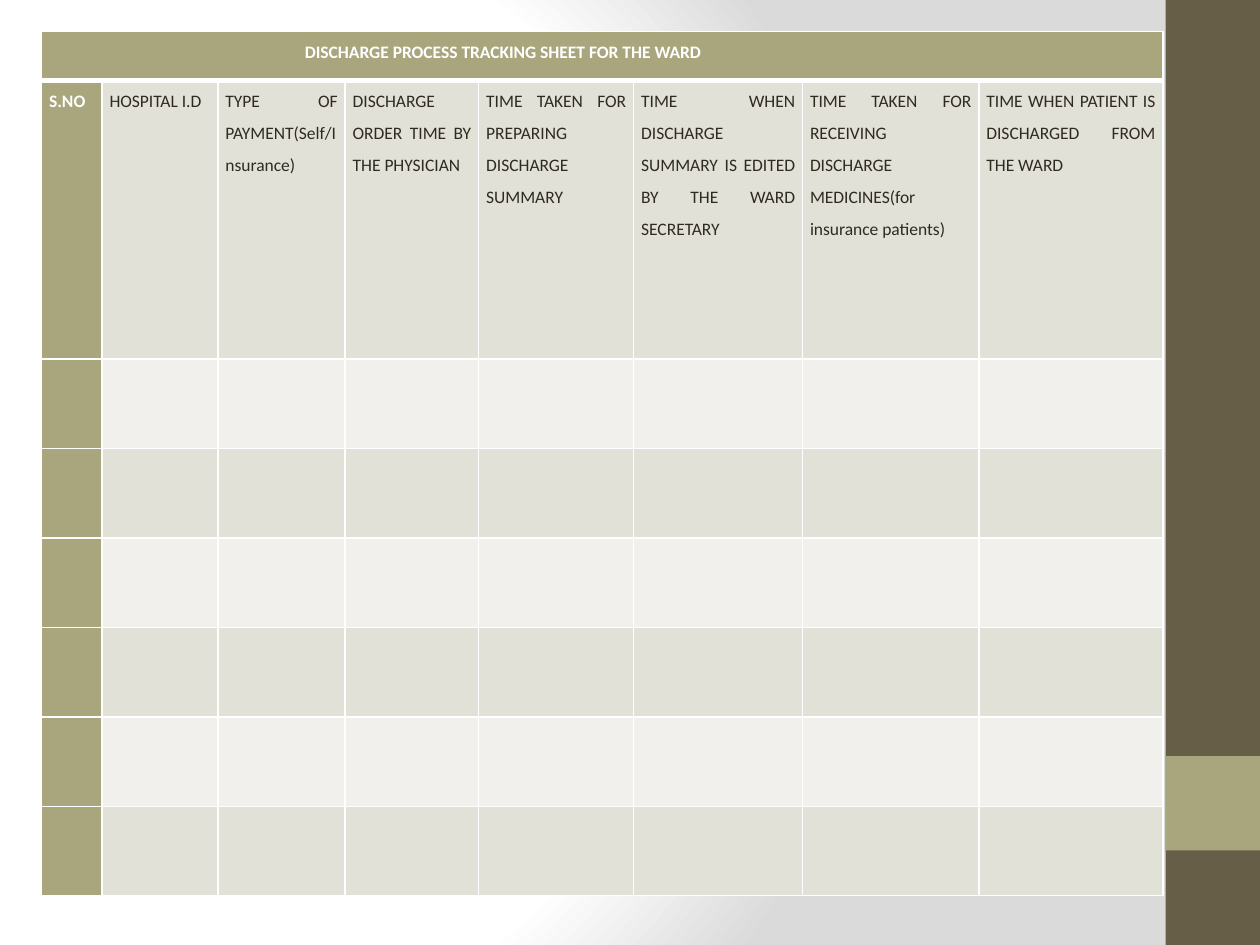
"""Build the discharge process tracking sheet slide."""
import pptx
import pptx.dml.color
import pptx.enum.shapes
import pptx.enum.text
import pptx.oxml
import pptx.oxml.ns
import pptx.util
from pptx.util import Inches

COLORS = {"bar": "675E47", "accent": "A9A57C", "band": "E2E1D7", "light": "F1F0EC",
          "text": "2F2B20", "white": "FFFFFF", "shade": "DADADA"}
TITLE = "DISCHARGE PROCESS TRACKING SHEET FOR THE WARD"
COLUMNS = [
    ("S.NO", 0.48),
    ("HOSPITAL I.D", 0.92),
    ("TYPE OF PAYMENT(Self/Insurance)", 1.01),
    ("DISCHARGE ORDER TIME BY THE PHYSICIAN", 1.06),
    ("TIME TAKEN FOR PREPARING DISCHARGE SUMMARY", 1.23),
    ("TIME WHEN DISCHARGE SUMMARY IS EDITED BY THE WARD SECRETARY", 1.34),
    ("TIME TAKEN FOR RECEIVING DISCHARGE MEDICINES(for insurance patients)", 1.4),
    ("TIME WHEN PATIENT IS DISCHARGED FROM THE WARD", 1.46),
]
ROW_HEIGHTS = [0.39, 2.21] + [0.71] * 6
SIDEBAR = [(0, 7.5, "bar"), (6, 0.75, "accent")]
NS = pptx.oxml.ns.nsdecls("a")


def rgb(name):
    return pptx.dml.color.RGBColor.from_string(COLORS[name])


def paint(obj, color):
    obj.fill.solid()
    obj.fill.fore_color.rgb = rgb(color)


def set_background(s):
    s.background.fill.solid()
    solid = s.element.xpath("p:cSld/p:bg/p:bgPr/a:solidFill")[0]
    stops = "".join(
        f'<a:gs pos="{pos * 1000}"><a:srgbClr val="{COLORS[color]}"/></a:gs>'
        for pos, color in [(0, "white"), (75, "white"), (100, "shade")])
    gradient = pptx.oxml.parse_xml(
        f'<a:gradFill {NS} rotWithShape="1"><a:gsLst>{stops}</a:gsLst>'
        '<a:path path="circle"><a:fillToRect l="20000" t="50000" r="100000" b="50000"/>'
        '</a:path></a:gradFill>')
    solid.getparent().replace(solid, gradient)


def set_borders(cell, top=1, bottom=1):
    tc_pr = cell._tc.get_or_add_tcPr()
    for side, points in [("L", 1), ("R", 1), ("T", top), ("B", bottom)]:
        tc_pr.append(pptx.oxml.parse_xml(
            f'<a:ln{side} {NS} w="{points * 12700}"><a:solidFill>'
            f'<a:srgbClr val="{COLORS["white"]}"/></a:solidFill></a:ln{side}>'))


def write(cell, text, color="text", bold=False, indent=0):
    cell.margin_left = cell.margin_right = Inches(0.06)
    cell.margin_top = cell.margin_bottom = 0
    p = cell.text_frame.paragraphs[0]
    p.alignment = pptx.enum.text.PP_ALIGN.JUSTIFY
    p.line_spacing = 1.5
    if indent:
        p._p.get_or_add_pPr().set("marL", str(Inches(indent)))
    r = p.add_run()
    r.text = text
    r.font.name = "Calibri"
    r.font.size = pptx.util.Pt(10)
    r.font.bold = bold
    r.font.color.rgb = rgb(color)


def add_tracking_table(s):
    widths = [width for _, width in COLUMNS]
    frame = s.shapes.add_table(len(ROW_HEIGHTS), len(COLUMNS), Inches(0.33), Inches(0.25),
                               Inches(sum(widths)), Inches(sum(ROW_HEIGHTS)))
    table = frame.table
    table.first_row = table.horz_banding = False
    for column, width in zip(table.columns, widths):
        column.width = Inches(width)
    for i, height in enumerate(ROW_HEIGHTS):
        table.rows[i].height = Inches(height)
        for j in range(len(COLUMNS)):
            cell = table.cell(i, j)
            set_borders(cell, top=3 if i == 1 else 1, bottom=3 if i == 0 else 1)
            paint(cell, "accent" if i == 0 or j == 0 else "band" if i % 2 else "light")
    table.cell(0, 0).merge(table.cell(0, len(COLUMNS) - 1))
    write(table.cell(0, 0), TITLE, color="white", bold=True, indent=2.03)
    for j, (heading, _) in enumerate(COLUMNS):
        write(table.cell(1, j), heading, color="text" if j else "white", bold=j == 0)


def main():
    prs = pptx.Presentation()
    prs.slide_width, prs.slide_height = Inches(10), Inches(7.5)
    s = prs.slides.add_slide(prs.slide_layouts[6])
    set_background(s)
    for top, height, color in SIDEBAR:
        sp = s.shapes.add_shape(pptx.enum.shapes.MSO_SHAPE.RECTANGLE, Inches(9.25),
                                Inches(top), Inches(0.75), Inches(height))
        sp.shadow.inherit = False
        paint(sp, color)
        sp.line.fill.background()
    add_tracking_table(s)
    prs.save("out.pptx")


if __name__ == "__main__":
    main()
